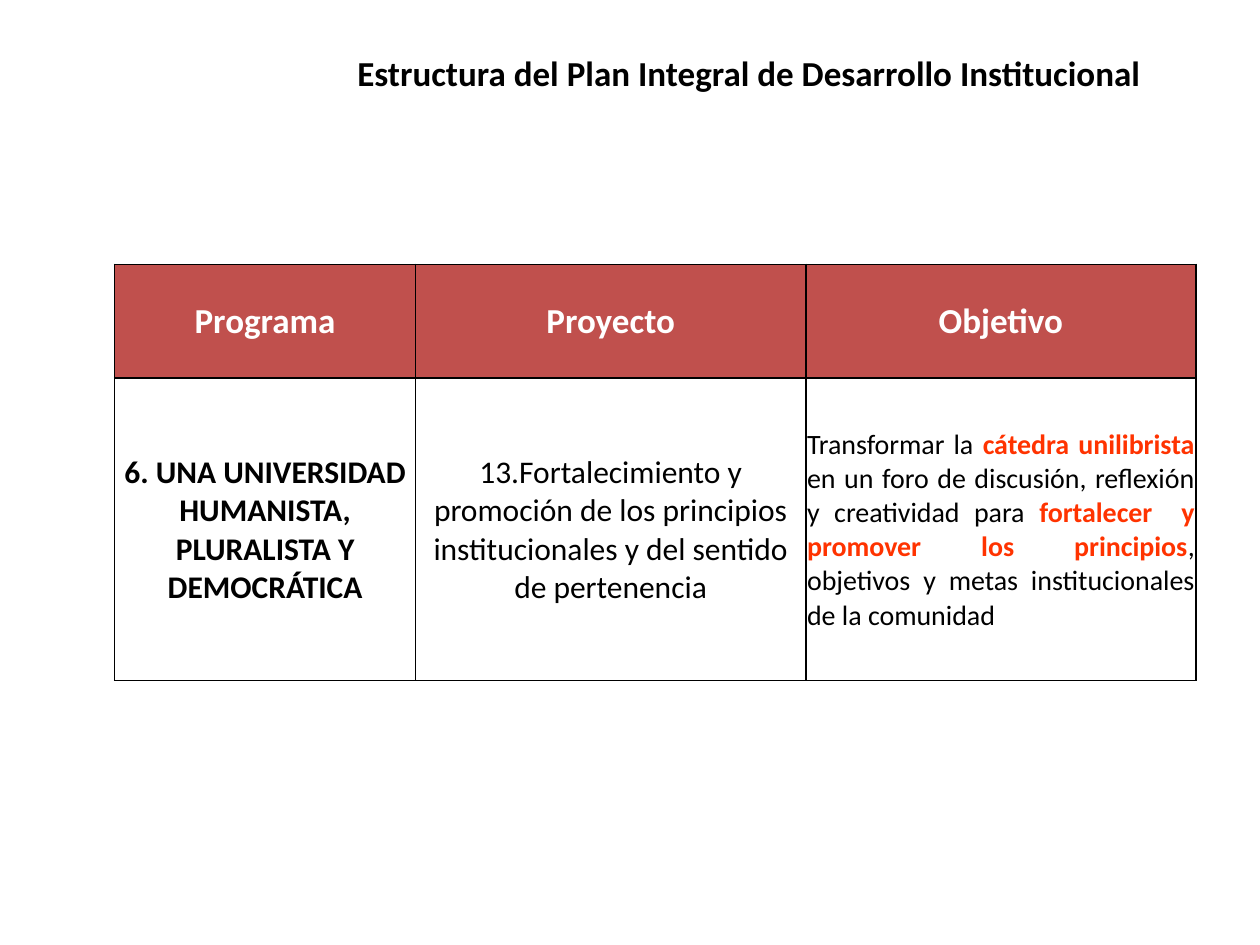
from dataclasses import dataclass

from lxml import etree
from pptx import Presentation
from pptx.dml.color import RGBColor
from pptx.enum.text import MSO_ANCHOR, PP_ALIGN
from pptx.oxml.ns import qn
from pptx.util import Pt

CENTER, JUSTIFY = PP_ALIGN.CENTER, PP_ALIGN.JUSTIFY
MIDDLE = MSO_ANCHOR.MIDDLE


@dataclass(frozen=True)
class Theme:
    font: str = "Calibri"
    black: str = "000000"
    white: str = "FFFFFF"
    head: str = "C0504D"
    accent: str = "FF3300"
    large: int = 20
    body: int = 18
    small: int = 16


THEME = Theme()

TITLE = "Estructura del Plan Integral de Desarrollo Institucional"
HEADS = ["Programa", "Proyecto", "Objetivo"]
PROGRAM = "6. UNA UNIVERSIDAD HUMANISTA, PLURALISTA Y DEMOCRÁTICA"
PROJECT = ("13.Fortalecimiento y promoción de los principios "
           "institucionales y del sentido de pertenencia")
# Each part of the goal: text, stressed or not
GOAL = [
    ("Transformar la ", False),
    ("cátedra unilibrista ", True),
    ("en un foro de discusión, reflexión y creatividad para ", False),
    ("fortalecer  y promover los principios", True),
    (", objetivos y metas institucionales de la comunidad", False),
]
COLS = [172, 223, 223]
ROWS = [65, 173]


def style(font, size, color, bold=False):
    font.name = THEME.font
    font.size = Pt(size)
    font.bold = bold
    font.color.rgb = RGBColor.from_string(color)


def write(frame, text, size, color, bold=False):
    para = frame.paragraphs[0]
    para.text = text
    para.alignment = CENTER
    style(para.font, size, color, bold)


def write_goal(frame):
    para = frame.paragraphs[0]
    para.alignment = JUSTIFY
    for text, stress in GOAL:
        run = para.add_run()
        run.text = text
        color = THEME.accent if stress else THEME.black
        style(run.font, THEME.small, color, stress)


def add_title(slide):
    box = slide.shapes.add_textbox(Pt(156), Pt(26), Pt(544), Pt(42))
    box.text_frame.word_wrap = True
    write(box.text_frame, TITLE, THEME.large, THEME.black, True)


def add_edges(cell):
    """Draw a thin line on all four sides; lines must precede the fill."""
    props = cell._tc.get_or_add_tcPr()
    for spot, side in enumerate(("lnL", "lnR", "lnT", "lnB")):
        line = etree.Element(qn(f"a:{side}"), w=str(Pt(1)))
        fill = etree.SubElement(line, qn("a:solidFill"))
        etree.SubElement(fill, qn("a:srgbClr"), val=THEME.black)
        props.insert(spot, line)


def format_cell(cell, color):
    cell.vertical_anchor = MIDDLE
    cell.margin_left = cell.margin_right = cell.margin_top = Pt(0.75)
    cell.margin_bottom = Pt(0)
    cell.fill.solid()
    cell.fill.fore_color.rgb = RGBColor.from_string(color)
    add_edges(cell)


def add_plan(slide):
    frame = slide.shapes.add_table(len(ROWS), len(COLS), Pt(65.5), Pt(151),
                                   Pt(sum(COLS)), Pt(sum(ROWS)))
    table = frame.table
    for col, width in zip(table.columns, COLS):
        col.width = Pt(width)
    for row, height, color in zip(table.rows, ROWS, (THEME.head, THEME.white)):
        row.height = Pt(height)
        for cell in row.cells:
            format_cell(cell, color)
    for cell, text in zip(table.rows[0].cells, HEADS):
        write(cell.text_frame, text, THEME.large, THEME.white, True)
    program, project, goal = table.rows[1].cells
    write(program.text_frame, PROGRAM, THEME.body, THEME.black, True)
    write(project.text_frame, PROJECT, THEME.body, THEME.black)
    write_goal(goal.text_frame)


def main():
    deck = Presentation()
    deck.slide_width, deck.slide_height = Pt(720), Pt(540)
    slide = deck.slides.add_slide(deck.slide_layouts[6])
    add_plan(slide)
    add_title(slide)
    deck.save("out.pptx")


if __name__ == "__main__":
    main()
